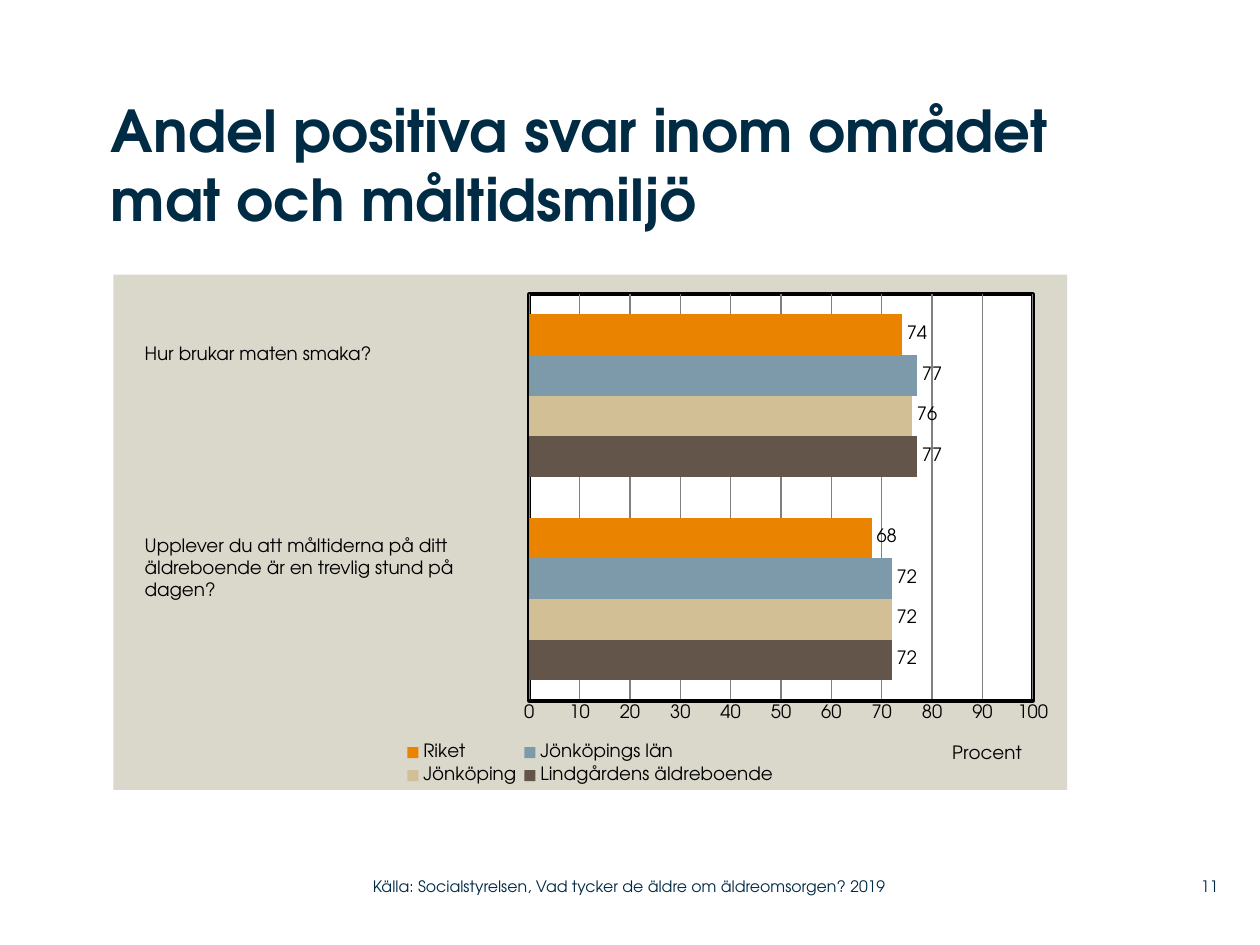
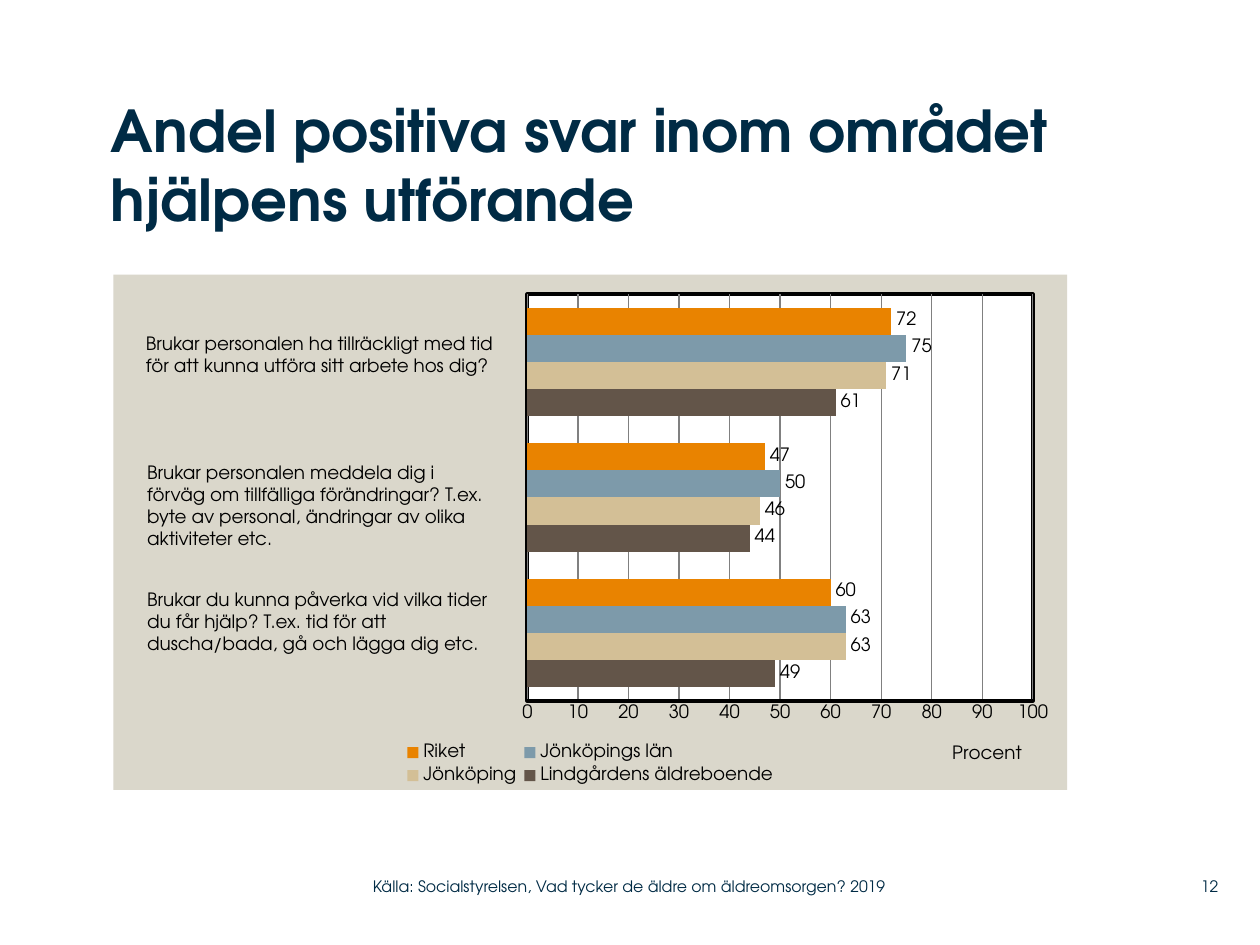
"""Build two slides with survey results for meals and the care given."""
import pptx
import pptx.chart.data
import pptx.dml.color
import pptx.enum.chart
import pptx.enum.text
import pptx.oxml
import pptx.oxml.ns
import pptx.util
from pptx.util import Inches

FONT = "TeX Gyre Adventor"
NAVY = "002B45"
BLACK = "000000"
WHITE = "FFFFFF"
PANEL = "DAD7CB"
GRID = "808080"
SERIES_COLORS = {
    "Lindgårdens äldreboende": "635549",
    "Jönköping": "D3BF96",
    "Jönköpings län": "7D9AAA",
    "Riket": "E98300",
}
SOURCE = "Källa: Socialstyrelsen, Vad tycker de äldre om äldreomsorgen? 2019"

SLIDES = [
    {
        "number": 11,
        "title": "Andel positiva svar inom området mat och måltidsmiljö",
        "title_width": 8.42,
        "plot": (0.436, 0.038, 0.528, 0.789),
        "values": [(72, 77), (72, 76), (72, 77), (68, 74)],
        "questions": [
            ((1.05, 2.67, 2.97, 0.28), ["Hur brukar maten smaka?"]),
            ((1.05, 4.19, 2.93, 0.63), [
                "Upplever du att måltiderna på ditt äldreboende är en trevlig stund på",
                "dagen?"]),
        ],
    },
    {
        "number": 12,
        "title": "Andel positiva svar inom området hjälpens utförande",
        "title_width": 7.6,
        "plot": (0.434, 0.038, 0.53, 0.789),
        "values": [(49, 44, 61), (63, 46, 71), (63, 50, 75), (60, 47, 72)],
        "questions": [
            ((1.06, 2.59, 2.99, 0.45), [
                "Brukar personalen ha tillräckligt med tid",
                "för att kunna utföra sitt arbete hos dig?"]),
            ((1.07, 3.61, 2.97, 0.81), [
                "Brukar personalen meddela dig i förväg om tillfälliga förändringar? "
                "T.ex. byte av personal, ändringar av olika aktiviteter etc."]),
            ((1.07, 4.62, 2.97, 0.63), [
                "Brukar du kunna påverka vid vilka tider",
                "du får hjälp? T.ex. tid för att",
                "duscha/bada, gå och lägga dig etc."]),
        ],
    },
]


def rgb(hex_color):
    """Return the colour for a hex string."""
    return pptx.dml.color.RGBColor.from_string(hex_color)


def style_font(font, size, color, bold=False):
    """Set name, size, colour and weight of a font."""
    font.name = FONT
    font.size = pptx.util.Pt(size)
    font.color.rgb = rgb(color)
    font.bold = bold


def clear_margins(text_frame):
    """Remove the inner margins of a text frame."""
    text_frame.margin_left = text_frame.margin_right = 0
    text_frame.margin_top = text_frame.margin_bottom = 0


def add_title(slide, text, width):
    """Fill and place the title placeholder."""
    title = slide.shapes.title
    title.left, title.top = Inches(0.88), Inches(0.75)
    title.width, title.height = Inches(width), Inches(1.42)
    text_frame = title.text_frame
    text_frame.text = text
    text_frame.word_wrap = True
    text_frame.auto_size = pptx.enum.text.MSO_AUTO_SIZE.NONE
    text_frame.vertical_anchor = pptx.enum.text.MSO_ANCHOR.TOP
    clear_margins(text_frame)
    paragraph = text_frame.paragraphs[0]
    paragraph.alignment = pptx.enum.text.PP_ALIGN.LEFT
    style_font(paragraph.runs[0].font, 33, NAVY, bold=True)


def add_text(slide, box, lines, size, color):
    """Add a wrapped text box with one paragraph per line."""
    text_frame = slide.shapes.add_textbox(*map(Inches, box)).text_frame
    text_frame.word_wrap = True
    text_frame.text = "\n".join(lines)
    for paragraph in text_frame.paragraphs:
        style_font(paragraph.runs[0].font, size, color)
    return text_frame


def add_footer_text(slide, box, text, alignment):
    """Add one centred-height text in the footer row."""
    text_frame = add_text(slide, box, [text], 9, NAVY)
    clear_margins(text_frame)
    text_frame.vertical_anchor = pptx.enum.text.MSO_ANCHOR.MIDDLE
    text_frame.paragraphs[0].alignment = alignment


def add_footer(slide, number):
    """Add the source line and the slide number."""
    align = pptx.enum.text.PP_ALIGN
    add_footer_text(slide, (9.2, 6.89, 0.47, 0.29), str(number), align.RIGHT)
    add_footer_text(slide, (2.96, 6.89, 4.43, 0.29), SOURCE, align.LEFT)


def set_layout(element, index, places, inner=False):
    """Give a chart part a manual layout of x, y and maybe w, h."""
    previous = element.find(pptx.oxml.ns.qn("c:layout"))
    if previous is not None:
        element.remove(previous)
    target = '<c:layoutTarget val="inner"/>' if inner else ""
    modes = '<c:xMode val="edge"/><c:yMode val="edge"/>'
    sizes = "".join(f'<c:{key} val="{value}"/>' for key, value in zip("xywh", places))
    element.insert(index, pptx.oxml.parse_xml(
        f'<c:layout {pptx.oxml.ns.nsdecls("c")}>'
        f"<c:manualLayout>{target}{modes}{sizes}</c:manualLayout></c:layout>"))


def area_format(fill, line=None, width=0):
    """Return shape properties for a chart area."""
    outline = "<a:noFill/>"
    if line:
        outline = f'<a:solidFill><a:srgbClr val="{line}"/></a:solidFill>'
    return pptx.oxml.parse_xml(
        f'<c:spPr {pptx.oxml.ns.nsdecls("c", "a")}>'
        f'<a:solidFill><a:srgbClr val="{fill}"/></a:solidFill>'
        f'<a:ln w="{pptx.util.Pt(width)}">{outline}</a:ln></c:spPr>')


def style_value_axis(axis):
    """Format the percent scale with its gridlines and title."""
    axis.minimum_scale, axis.maximum_scale, axis.major_unit = 0, 100, 10
    axis.major_tick_mark = axis.minor_tick_mark = pptx.enum.chart.XL_TICK_MARK.NONE
    axis.format.line.color.rgb = rgb(BLACK)
    axis.format.line.width = pptx.util.Pt(2)
    gridline = axis.major_gridlines.format.line
    gridline.color.rgb = rgb(GRID)
    gridline.width = pptx.util.Pt(0.75)
    style_font(axis.tick_labels.font, 10.5, BLACK)
    text_frame = axis.axis_title.text_frame
    text_frame.text = "Procent"
    text_frame._txBody.bodyPr.set("rot", "0")
    style_font(text_frame.paragraphs[0].runs[0].font, 10.5, BLACK)
    set_layout(axis.axis_title._element, 1, (0.876, 0.905))


def style_series(series, color):
    """Colour the bars of a series and show their values."""
    series.format.fill.solid()
    series.format.fill.fore_color.rgb = rgb(color)
    series.invert_if_negative = False
    labels = series.data_labels
    labels.show_value = True
    labels.position = pptx.enum.chart.XL_LABEL_POSITION.OUTSIDE_END
    style_font(labels.font, 10.5, BLACK)


def add_answer_chart(slide, values, plot_layout):
    """Add the bar chart of positive answers."""
    data = pptx.chart.data.CategoryChartData()
    data.categories = [str(number + 1) for number in range(len(values[0]))]
    for name, series_values in zip(SERIES_COLORS, values):
        data.add_series(name, series_values)
    box = map(Inches, (0.9, 2.18, 7.57, 4.09))
    chart = slide.shapes.add_chart(
        pptx.enum.chart.XL_CHART_TYPE.BAR_CLUSTERED, *box, data).chart
    style_font(chart.font, 10.5, BLACK)
    chart.has_title = False
    chart.category_axis.visible = False
    style_value_axis(chart.value_axis)
    plot = chart.plots[0]
    plot.gap_width = 100
    plot.vary_by_categories = False
    for series in plot.series:
        style_series(series, SERIES_COLORS[series.name])
    chart.has_legend = True
    chart.legend.position = pptx.enum.chart.XL_LEGEND_POSITION.BOTTOM
    chart.legend.include_in_layout = False
    style_font(chart.legend.font, 10.5, BLACK)
    set_layout(chart.legend._element, 1, (0.3, 0.9, 0.4, 0.1))
    chart_element = chart._chartSpace.chart
    set_layout(chart_element.plotArea, 0, plot_layout, inner=True)
    chart_element.plotArea.append(area_format(WHITE, BLACK, 2.25))
    chart_element.addnext(area_format(PANEL))


def main():
    """Build and save the presentation."""
    presentation = pptx.Presentation()
    presentation.slide_width, presentation.slide_height = Inches(10), Inches(7.5)
    for content in SLIDES:
        slide = presentation.slides.add_slide(presentation.slide_layouts[5])
        add_answer_chart(slide, content["values"], content["plot"])
        add_title(slide, content["title"], content["title_width"])
        for box, lines in content["questions"]:
            add_text(slide, box, lines, 10.5, BLACK)
        add_footer(slide, content["number"])
    presentation.save("out.pptx")


if __name__ == "__main__":
    main()
